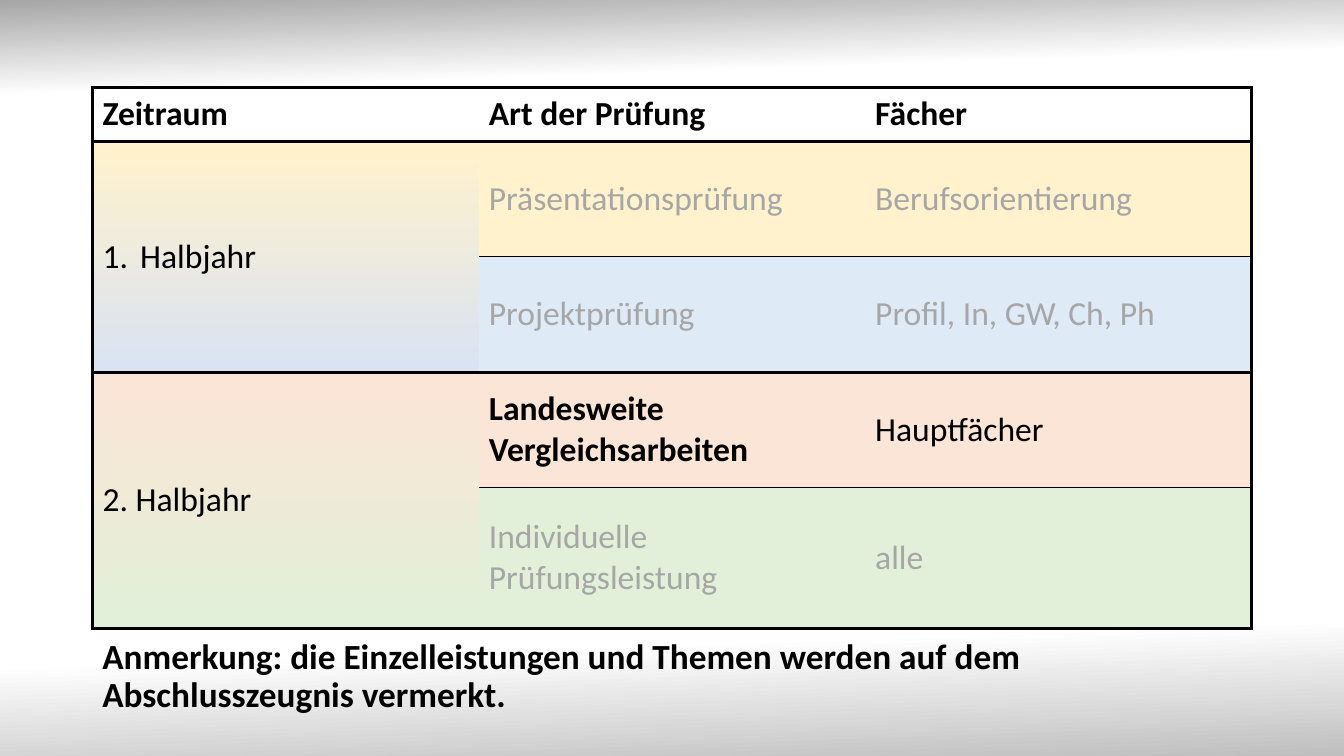
import pptx
import pptx.dml.color
import pptx.enum.text
import pptx.oxml
import pptx.oxml.ns
import pptx.util

Cm = pptx.util.Cm
Pt = pptx.util.Pt
qn = pptx.oxml.ns.qn

FONT = "Calibri"
COLORS = {
    "text": "000000", "muted": "A6A6A6", "white": "FFFFFF", "shade": "BFBFBF",
    "yellow": "FFF2CC", "blue": "DEEBF7", "periwinkle": "DAE3F3",
    "orange": "FBE5D6", "green": "E2F0D9",
}
THICK, THIN = 2.25, 1
HEADERS = ["Zeitraum", "Art der Prüfung", "Fächer"]
EXAMS = [
    ("Präsentationsprüfung", "Berufsorientierung", "yellow", False),
    ("Projektprüfung", "Profil, In, GW, Ch, Ph", "blue", False),
    ("Landesweite Vergleichsarbeiten", "Hauptfächer", "orange", True),
    ("Individuelle Prüfungsleistung", "alle", "green", False),
]
TERMS = [
    (1, "Halbjahr", ("yellow", "periwinkle"), True),
    (3, "2. Halbjahr", ("orange", "green"), False),
]
ROW_HEIGHTS = [1.35, 2.91, 2.91, 2.91, 3.54]


def xml(tag, body):
    ns = pptx.oxml.ns.nsdecls("a", "p")
    return pptx.oxml.parse_xml(f"<{tag} {ns}>{body}</{tag}>")


def solid(color):
    return f'<a:solidFill><a:srgbClr val="{COLORS[color]}"/></a:solidFill>'


def gradient_body(stops, angle):
    gs = "".join(
        f'<a:gs pos="{pos * 1000}"><a:srgbClr val="{COLORS[color]}"/></a:gs>'
        for pos, color in stops)
    return f'<a:gsLst>{gs}</a:gsLst><a:lin ang="{angle * 60000}" scaled="0"/>'


def set_background(s):
    stops = [(0, "muted"), (12, "white"), (83, "white"), (100, "shade")]
    fill = f'<a:gradFill rotWithShape="1">{gradient_body(stops, 88)}</a:gradFill>'
    bg = xml("p:bg", f"<p:bgPr>{fill}<a:effectLst/></p:bgPr>")
    s.element.find(qn("p:cSld")).insert(0, bg)


def format_text(tf, size, color="text", bold=False):
    for p in tf.paragraphs:
        for r in p.runs:
            r.font.name = FONT
            r.font.size = Pt(size)
            r.font.bold = bold
            r.font.color.rgb = pptx.dml.color.RGBColor.from_string(COLORS[color])


def set_cell(cell, text, color="text", bold=False):
    cell.text_frame.text = text
    cell.vertical_anchor = pptx.enum.text.MSO_ANCHOR.MIDDLE
    format_text(cell.text_frame, 24, color, bold)


def fill_cell(cell, color):
    cell.fill.solid()
    cell.fill.fore_color.rgb = pptx.dml.color.RGBColor.from_string(COLORS[color])


def set_borders(cell, **widths):
    tcPr = cell._tc.get_or_add_tcPr()
    for i, side in enumerate("LRTB"):
        width = widths.get(side)
        line = xml(f"a:ln{side}", solid("text") if width else "<a:noFill/>")
        if width:
            line.set("w", str(Pt(width)))
        tcPr.insert(i, line)


def number_paragraph(p):
    pPr = p._p.get_or_add_pPr()
    indent = Cm(0.95)
    pPr.set("marL", str(indent))
    pPr.set("indent", str(-indent))
    pPr.append(xml("a:buFont", ""))
    pPr[-1].set("typeface", "+mj-lt")
    pPr.append(xml("a:buAutoNum", ""))
    pPr[-1].set("type", "arabicPeriod")


def add_exam_table(s, left, top, width):
    rows, cols = len(ROW_HEIGHTS), len(HEADERS)
    frame = s.shapes.add_table(rows, cols, Cm(left), Cm(top), Cm(width),
                               Cm(sum(ROW_HEIGHTS)))
    table = frame.table
    table.first_row = table.horz_banding = False
    for row, height in zip(table.rows, ROW_HEIGHTS):
        row.height = Cm(height)
    for col in table.columns:
        col.width = Cm(width / cols)

    for c, header in enumerate(HEADERS):
        set_cell(table.cell(0, c), header, bold=True)
        fill_cell(table.cell(0, c), "white")
    for r, (exam, subjects, color, current) in enumerate(EXAMS, 1):
        text_color = "text" if current else "muted"
        set_cell(table.cell(r, 1), exam, text_color, current)
        set_cell(table.cell(r, 2), subjects, text_color)
        for c in (1, 2):
            fill_cell(table.cell(r, c), color)
    for r, term, (start, end), numbered in TERMS:
        cell = table.cell(r, 0)
        cell.merge(table.cell(r + 1, 0))
        set_cell(cell, term)
        if numbered:
            number_paragraph(cell.text_frame.paragraphs[0])
        cell._tc.get_or_add_tcPr().append(
            xml("a:gradFill", gradient_body([(0, start), (100, end)], 90)))

    for r in range(rows):
        for c in range(cols):
            inner = THIN if c else None
            set_borders(
                table.cell(r, c),
                L=THICK if c == 0 else None,
                R=THICK if c == cols - 1 else None,
                T=inner if r in (2, 4) else THICK,
                B=THICK if c == 0 or r in (0, 2, 4) else THIN)


def add_remark(s, left, top, width, height):
    box = s.shapes.add_textbox(Cm(left), Cm(top), Cm(width), Cm(height))
    tf = box.text_frame
    tf.word_wrap = True
    tf.vertical_anchor = pptx.enum.text.MSO_ANCHOR.MIDDLE
    tf.text = ("Anmerkung: die Einzelleistungen und Themen werden auf dem "
               "Abschlusszeugnis vermerkt.")
    tf.paragraphs[0].line_spacing = 0.9
    format_text(tf, 25.2, bold=True)


def main():
    prs = pptx.Presentation()
    prs.slide_width, prs.slide_height = Cm(33.87), Cm(19.05)
    s = prs.slides.add_slide(prs.slide_layouts[6])
    set_background(s)
    left, width = 2.33, 29.21
    add_remark(s, left, 16.03, width, 2.08)
    add_exam_table(s, left, 2.21, width)
    prs.save("out.pptx")


if __name__ == "__main__":
    main()
